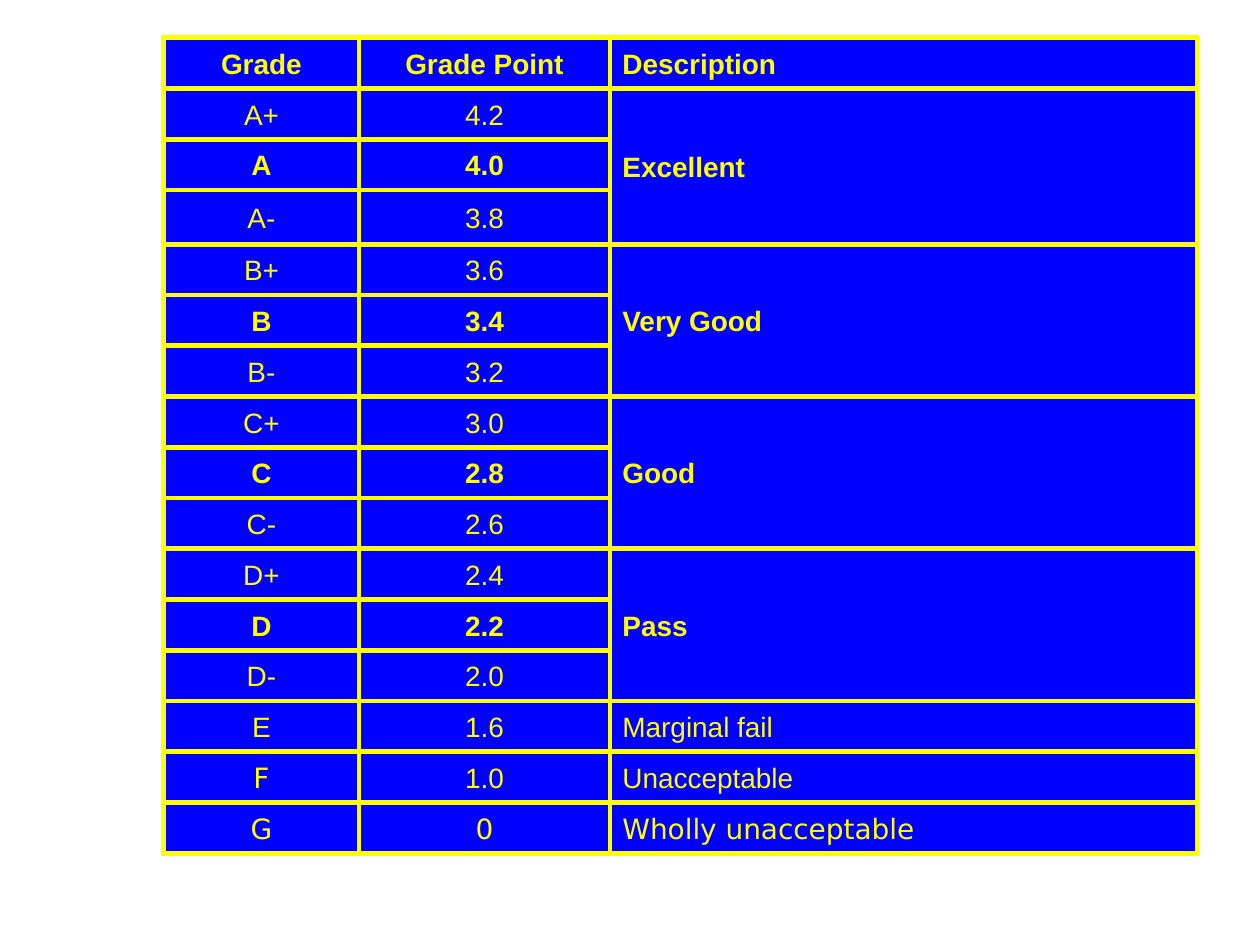
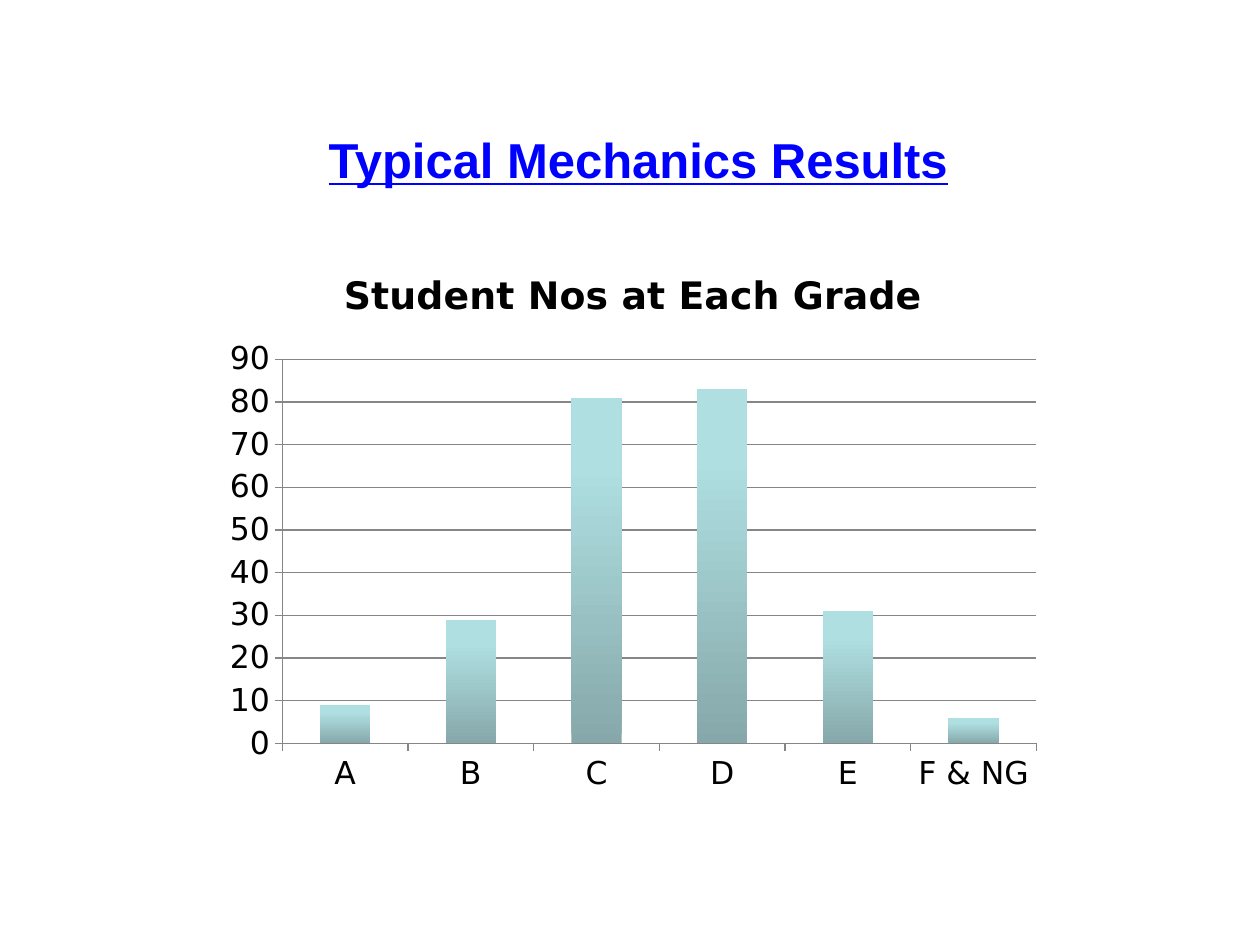
from pptx import Presentation as Deck
from pptx.chart.data import CategoryChartData as Data
from pptx.dml.color import RGBColor as Rgb
from pptx.enum.chart import XL_CHART_TYPE as Kind, XL_TICK_MARK as Tick
from pptx.enum.text import MSO_ANCHOR as Anchor, PP_ALIGN as Align
from pptx.oxml import parse_xml
from pptx.oxml.ns import nsdecls
from pptx.util import Pt

HUES = {
    "blue": "0000FF",
    "yellow": "FFFF00",
    "black": "000000",
    "grid": "868686",
    "light": "AFDFE1",
    "dark": "86A8AA",
}
SANS = "Arial"
DEJA = "DejaVu Sans"

HEADS = ["Grade", "Grade Point", "Description"]
BANDS = [("A", "Excellent"), ("B", "Very Good"), ("C", "Good"), ("D", "Pass")]
FAILS = [
    [("E", SANS), ("1.6", SANS), ("Marginal fail", SANS)],
    [("F", DEJA), ("1.0", SANS), ("Unacceptable", SANS)],
    [("G", DEJA), ("0", DEJA), ("Wholly unacceptable", DEJA)],
]
COLS = [111.6, 143.3, 335.5]
ROWS = [31 if row == 3 else 29 for row in range(16)]
COUNTS = {"A": 9, "B": 29, "C": 81, "D": 83, "E": 31, "F & NG": 6}


def hue(name):
    return Rgb.from_string(HUES[name])


def style(font, size, tint, face, bold=False):
    font.size = Pt(size)
    font.name = face
    font.bold = bold
    font.color.rgb = hue(tint)


def add_run(para, text, size, tint, face=SANS, bold=False):
    run = para.add_run()
    run.text = text
    style(run.font, size, tint, face, bold)
    return run


def add_edges(cell):
    props = cell._tc.get_or_add_tcPr()
    for spot, side in enumerate("LRTB"):
        props.insert(spot, parse_xml(
            f'<a:ln{side} {nsdecls("a")} w="{Pt(3)}"><a:solidFill>'
            f'<a:srgbClr val="{HUES["yellow"]}"/></a:solidFill></a:ln{side}>'))


def fill_cell(cell, text, face=SANS, bold=False, align=Align.CENTER):
    para = cell.text_frame.paragraphs[0]
    para.alignment = align
    para.line_spacing = 1.1
    add_run(para, text, 16, "yellow", face, bold)


def add_grid(slide):
    frame = slide.shapes.add_table(
        len(ROWS), len(COLS), Pt(93.6), Pt(21.6), Pt(sum(COLS)), Pt(sum(ROWS)))
    table = frame.table
    for col, width in zip(table.columns, COLS):
        col.width = Pt(width)
    for row, height in zip(table.rows, ROWS):
        row.height = Pt(height)
    for cell in table.iter_cells():
        cell.fill.solid()
        cell.fill.fore_color.rgb = hue("blue")
        cell.vertical_anchor = Anchor.MIDDLE
        add_edges(cell)
    return table


def add_grades(slide):
    table = add_grid(slide)
    sides = [Align.CENTER, Align.CENTER, Align.LEFT]
    for col, head in enumerate(HEADS):
        fill_cell(table.cell(0, col), head, bold=True, align=sides[col])
    row = 1
    for grade, label in BANDS:
        span = table.cell(row, 2)
        span.merge(table.cell(row + 2, 2))
        fill_cell(span, label, bold=True, align=Align.LEFT)
        for sign in ("+", "", "-"):
            bold = not sign
            point = 4.2 - 0.2 * (row - 1)
            fill_cell(table.cell(row, 0), grade + sign, bold=bold)
            fill_cell(table.cell(row, 1), f"{point:.1f}", bold=bold)
            row += 1
    for row, fail in enumerate(FAILS, row):
        for col, (text, face) in enumerate(fail):
            fill_cell(table.cell(row, col), text, face, align=sides[col])


def add_title(slide, text):
    box = slide.shapes.add_textbox(Pt(36.7), Pt(60.5), Pt(664.6), Pt(49.7))
    box.text_frame.word_wrap = True
    para = box.text_frame.paragraphs[0]
    para.line_spacing = 1.3
    para._p.get_or_add_pPr().set("marL", str(Pt(144)))
    add_run(para, text, 28, "blue", bold=True).font.underline = True


def set_line(line):
    line.width = Pt(0.75)
    line.color.rgb = hue("grid")


def add_bars(slide, title, counts):
    data = Data()
    data.categories = list(counts)
    data.add_series(title, list(counts.values()))
    chart = slide.shapes.add_chart(
        Kind.COLUMN_CLUSTERED, Pt(121.7), Pt(139.7), Pt(480.2), Pt(319.7), data).chart
    style(chart.font, 18, "black", DEJA)
    chart.has_legend = False
    chart.has_title = True
    para = chart.chart_title.text_frame.paragraphs[0]
    add_run(para, title, 21.6, "black", DEJA, True)
    for axis in (chart.category_axis, chart.value_axis):
        axis.major_tick_mark = Tick.OUTSIDE
        axis.minor_tick_mark = Tick.NONE
        set_line(axis.format.line)
    scale = chart.value_axis
    scale.minimum_scale, scale.maximum_scale, scale.major_unit = 0, 90, 10
    scale.has_major_gridlines = True
    set_line(scale.major_gridlines.format.line)
    plot = chart.plots[0]
    plot.gap_width = 150
    plot.vary_by_categories = False
    fill = plot.series[0].format.fill
    fill.gradient()
    fill.gradient_angle = 90
    for stop, tint, place in zip(fill.gradient_stops, ("dark", "light"), (0, 0.8)):
        stop.color.rgb = hue(tint)
        stop.position = place


def main():
    deck = Deck()
    deck.slide_width, deck.slide_height = Pt(720), Pt(540)
    blank = deck.slide_layouts[6]
    add_grades(deck.slides.add_slide(blank))
    slide = deck.slides.add_slide(blank)
    add_title(slide, "Typical Mechanics Results")
    add_bars(slide, "Student Nos at Each Grade", COUNTS)
    deck.save("out.pptx")


if __name__ == "__main__":
    main()
